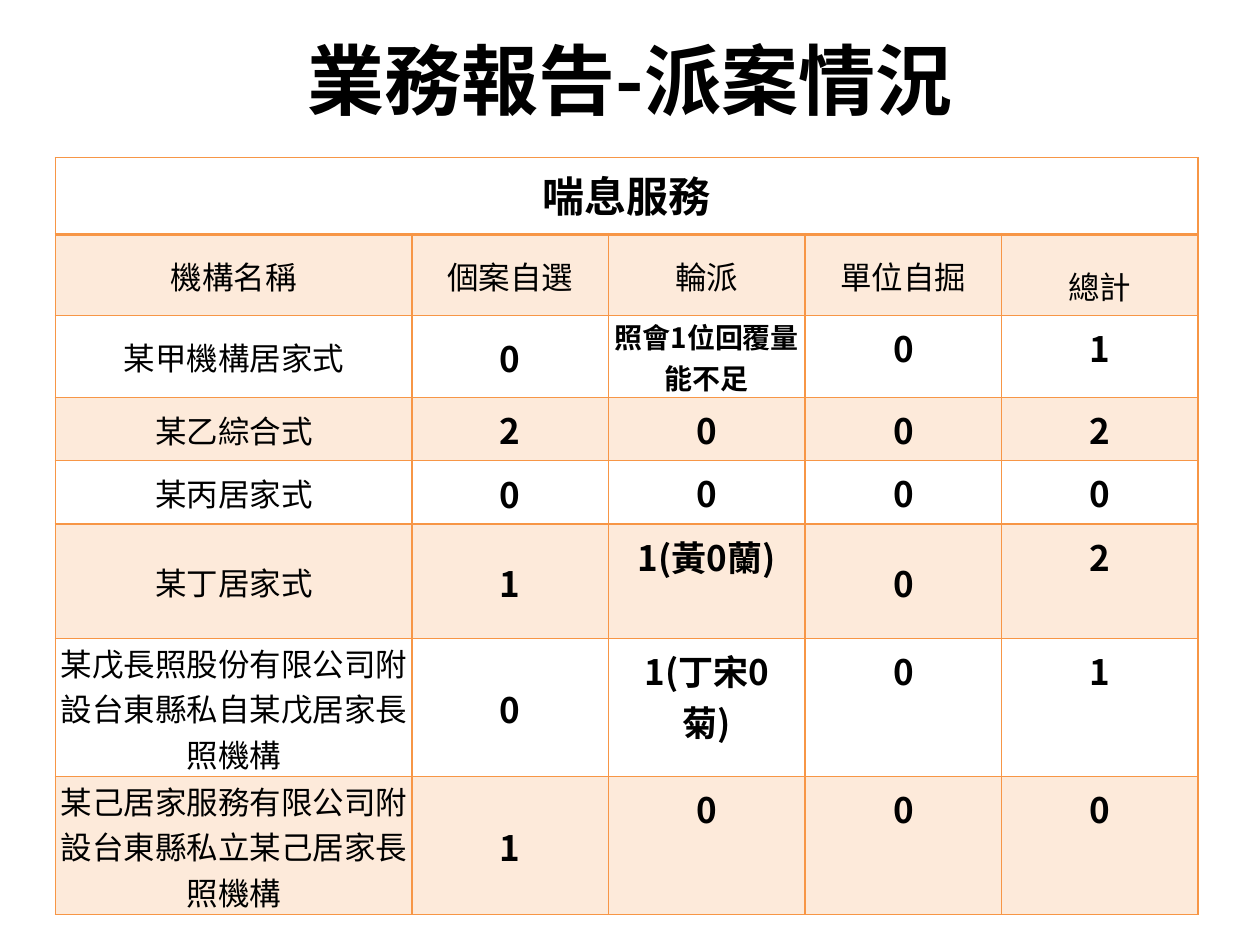
from lxml import etree
from pptx import Presentation
from pptx.dml.color import RGBColor
from pptx.enum.text import MSO_ANCHOR, PP_ALIGN
from pptx.oxml.ns import qn
from pptx.util import Inches, Pt

CENTER = PP_ALIGN.CENTER
MIDDLE = MSO_ANCHOR.MIDDLE
TOP = MSO_ANCHOR.TOP
FONT = "Noto Sans CJK SC"
ORANGE = "F79646"


def write(tf, text, size, bold):
    """Fill a text frame with one centred paragraph and return it."""
    p = tf.paragraphs[0]
    p.text = text
    p.alignment = CENTER
    p.font.name = FONT
    p.font.size = Pt(size)
    p.font.bold = bold
    p.font.color.rgb = RGBColor.from_string("000000")
    props = p._p.pPr.find(qn("a:defRPr"))
    props.find(qn("a:latin")).addnext(
        props.makeelement(qn("a:ea"), {"typeface": FONT}))
    return p


def add_borders(cell, top=1, bottom=1):
    tcPr = cell._tc.get_or_add_tcPr()
    for side, width in (("L", 1), ("R", 1), ("T", top), ("B", bottom)):
        ln = etree.SubElement(tcPr, qn(f"a:ln{side}"), w=str(Pt(width)))
        fill = etree.SubElement(ln, qn("a:solidFill"))
        etree.SubElement(fill, qn("a:srgbClr"), val=ORANGE)


prs = Presentation()
prs.slide_width, prs.slide_height = Inches(10), Inches(7.5)
s = prs.slides.add_slide(prs.slide_layouts[5])

title = s.shapes.title
title.left, title.top = Inches(0.5), Inches(0)
title.width, title.height = Inches(9), Inches(1.25)
title.text_frame.vertical_anchor = MIDDLE
write(title.text_frame, "業務報告-派案情況", 44, True)

rows = [
    ["喘息服務", "", "", "", ""],
    ["機構名稱", "個案自選", "輪派", "單位自掘", "總計"],
    ["某甲機構居家式", "0", "照會1位回覆量能不足", "0", "1"],
    ["某乙綜合式", "2", "0", "0", "2"],
    ["某丙居家式", "0", "0", "0", "0"],
    ["某丁居家式", "1", "1(黃0蘭)", "0", "2"],
    ["某戊長照股份有限公司附設台東縣私自某戊居家長照機構", "0", "1(丁宋0菊)", "0", "1"],
    ["某己居家服務有限公司附設台東縣私立某己居家長照機構", "1", "0", "0", "0"],
]
col_widths = [2.83, 1.56, 1.56, 1.56, 1.56]
row_heights = [0.61, 0.44, 0.27, 0.46, 0.39, 0.39, 0.95, 0.39]
# Besides the first two columns, these cells are centred with tight margins
tight_cells = {(1, 2), (1, 3), (2, 2), (5, 3)}

frame = s.shapes.add_table(len(rows), len(col_widths), Inches(0.44),
                           Inches(1.25), Inches(9.06), Inches(4.9))
table = frame.table
table.first_row = table.horz_banding = False
for column, width in zip(table.columns, col_widths):
    column.width = Inches(width)
for row, height in zip(table.rows, row_heights):
    row.height = Inches(height)
frame.height = Inches(4.9)
table.cell(0, 0).merge(table.cell(0, 4))

for i, texts in enumerate(rows):
    for j, text in enumerate(texts):
        cell = table.cell(i, j)
        add_borders(cell, top=2 if i == 1 else 1, bottom=2 if i == 0 else 1)
        if i % 2:
            cell.fill.solid()
            cell.fill.fore_color.rgb = RGBColor.from_string(ORANGE)
            color = cell._tc.tcPr.find(qn("a:solidFill"))[0]
            etree.SubElement(color, qn("a:alpha"), val="20000")
        else:
            cell.fill.background()
        if not text:
            continue
        if i > 0 and (j < 2 or (i, j) in tight_cells):
            cell.vertical_anchor = MIDDLE
            cell.margin_left = cell.margin_right = cell.margin_top = Inches(0.01)
            cell.margin_bottom = Inches(0)
        else:
            cell.vertical_anchor = TOP
        if i == 0:
            size = 24
        elif i == 1 or j == 0:
            size = 18
        else:
            size = 16 if (i, j) == (2, 2) else 20
        p = write(cell.text_frame, text, size, size != 18)
        if text == "總計":
            p.line_spacing = 1.5

prs.save("out.pptx")
